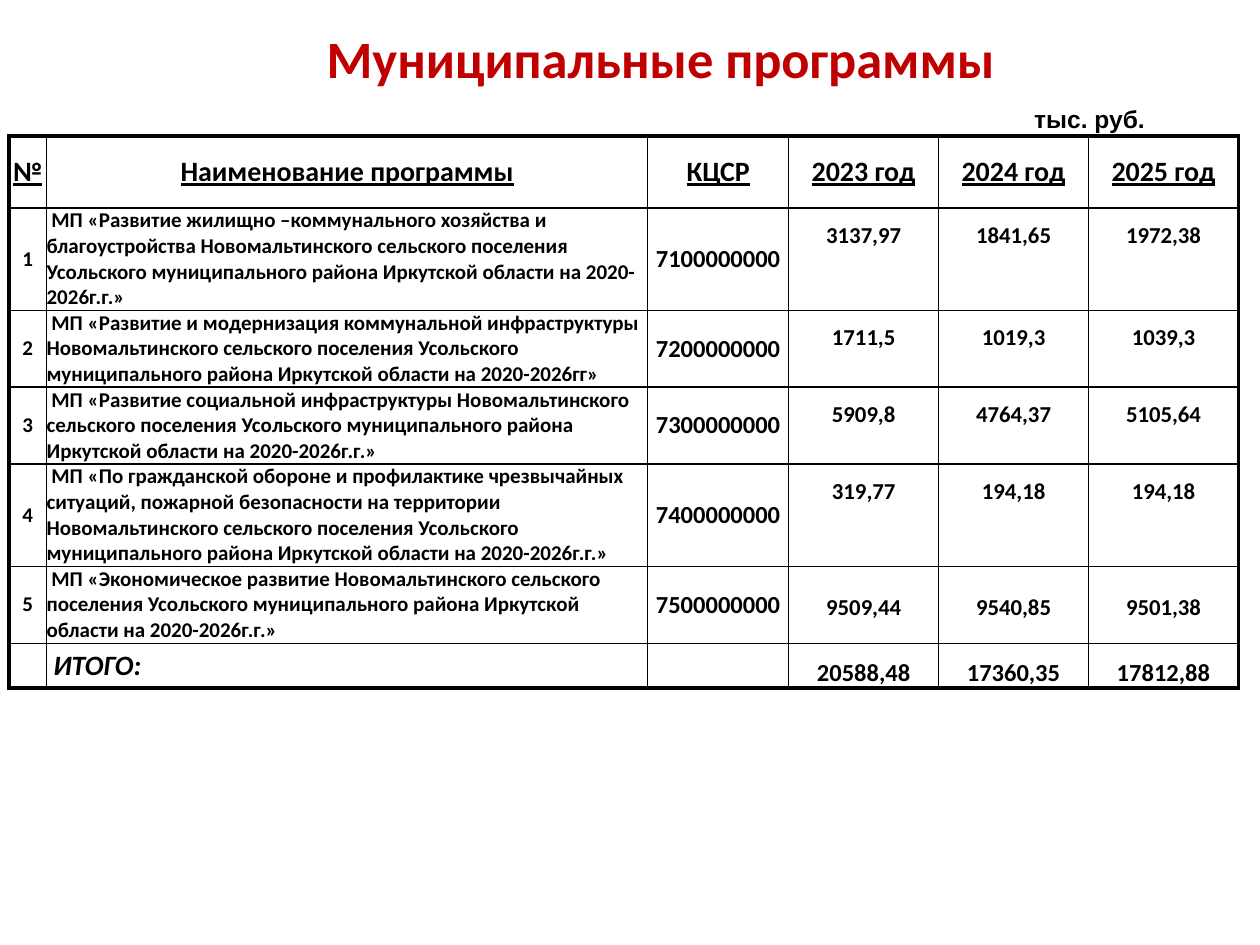
from lxml import etree
from pptx import Presentation
from pptx.dml.color import RGBColor
from pptx.enum.text import MSO_ANCHOR, MSO_AUTO_SIZE, PP_ALIGN
from pptx.oxml.ns import qn
from pptx.util import Inches, Pt

LEFT, CENTER = PP_ALIGN.LEFT, PP_ALIGN.CENTER
TOP, MIDDLE = MSO_ANCHOR.TOP, MSO_ANCHOR.MIDDLE
NO_FIT, GROW = MSO_AUTO_SIZE.NONE, MSO_AUTO_SIZE.SHAPE_TO_FIT_TEXT
TITLE_ONLY = 5

COLUMN_WIDTHS = [0.3, 4.77, 1.12, 1.19, 1.19, 1.19]
ROW_HEIGHTS = [0.57, 0.8, 0.6, 0.6, 0.8, 0.6, 0.35]
HEADINGS = ["№", "Наименование программы", "КЦСР", "2023 год", "2024 год", "2025 год"]
PROGRAMS = [
    (" МП «Развитие жилищно –коммунального хозяйства и благоустройства "
     "Новомальтинского сельского поселения Усольского муниципального района "
     "Иркутской области на 2020-2026г.г.»",
     "7100000000", ["3137,97", "1841,65", "1972,38"], 1.5),
    (" МП «Развитие и модернизация коммунальной инфраструктуры "
     "Новомальтинского сельского поселения Усольского муниципального района "
     "Иркутской области на 2020-2026гг»",
     "7200000000", ["1711,5", "1019,3", "1039,3"], 1.5),
    (" МП «Развитие социальной инфраструктуры "
     "Новомальтинского сельского поселения Усольского муниципального района "
     "Иркутской области на 2020-2026г.г.»",
     "7300000000", ["5909,8", "4764,37", "5105,64"], 1.5),
    (" МП «По гражданской обороне и профилактике чрезвычайных ситуаций, "
     "пожарной безопасности на территории "
     "Новомальтинского сельского поселения Усольского муниципального района "
     "Иркутской области на 2020-2026г.г.»",
     "7400000000", ["319,77", "194,18", "194,18"], 1.5),
    (" МП «Экономическое развитие "
     "Новомальтинского сельского поселения Усольского муниципального района "
     "Иркутской области на 2020-2026г.г.»",
     "7500000000", ["9509,44", "9540,85", "9501,38"], 2.0),
]
TOTALS = ["20588,48", "17360,35", "17812,88"]


def color(value):
    return RGBColor.from_string(value)


class Page:
    ink, accent = "000000", "C00000"
    font, label_font = "Calibri", "Arial"
    thin, thick = 1, 2.25

    def __init__(self, deck):
        self.deck = deck
        self.slide = deck.slides.add_slide(deck.slide_layouts[TITLE_ONLY])

    def area(self, left, top, width, height):
        across, down = self.deck.slide_width, self.deck.slide_height
        return (round(left * across), round(top * down),
                round(width * across), round(height * down))

    def add_span(self, para, text, size, font=None, ink=None, underline=False, italic=False):
        span = para.add_run()
        span.text = text
        span.font.name = font or self.font
        span.font.size = Pt(size)
        span.font.bold = True
        span.font.underline = underline
        span.font.italic = italic
        span.font.color.rgb = color(ink or self.ink)

    def title(self, text, *shares):
        box = self.slide.shapes.title
        box.left, box.top, box.width, box.height = self.area(*shares)
        frame = box.text_frame
        frame.auto_size = NO_FIT
        frame.vertical_anchor = MIDDLE
        para = frame.paragraphs[0]
        para.alignment = CENTER
        self.add_span(para, text, 30, ink=self.accent)

    def label(self, text, *shares):
        frame = self.slide.shapes.add_textbox(*self.area(*shares)).text_frame
        frame.word_wrap = False
        frame.auto_size = GROW
        self.add_span(frame.paragraphs[0], text, 14, self.label_font)

    def table(self, widths, heights, *shares):
        holder = self.slide.shapes.add_table(len(heights), len(widths), *self.area(*shares))
        table = holder.table
        table.first_row = table.horz_banding = False
        for column, width in zip(table.columns, widths):
            column.width = Inches(width)
        for row, height in zip(table.rows, heights):
            row.height = Inches(height)
        last_row, last_column = len(heights) - 1, len(widths) - 1
        for r in range(len(heights)):
            for c in range(len(widths)):
                cell = table.cell(r, c)
                cell.fill.background()
                cell.margin_left = cell.margin_right = 0
                cell.margin_top = cell.margin_bottom = 0
                outer = [c == 0, c == last_column, r == 0, r == last_row]
                self.borders(cell, outer)
        return table

    def borders(self, cell, outer):
        properties = cell._tc.get_or_add_tcPr()
        for place, (side, edge) in enumerate(zip("LRTB", outer)):
            width = Pt(self.thick if edge else self.thin)
            line = etree.Element(qn(f"a:ln{side}"), w=str(width))
            fill = etree.SubElement(line, qn("a:solidFill"))
            etree.SubElement(fill, qn("a:srgbClr"), val=self.ink)
            properties.insert(place, line)

    def cell(self, cell, text, size, align=CENTER, anchor=MIDDLE, spacing=None,
             margin=0, **style):
        cell.vertical_anchor = anchor
        cell.margin_left = cell.margin_right = Inches(margin)
        para = cell.text_frame.paragraphs[0]
        para.alignment = align
        if spacing:
            para.line_spacing = spacing
        self.add_span(para, text, size, **style)
        return para


def main():
    deck = Presentation()
    deck.slide_width, deck.slide_height = Inches(10), Inches(7.5)
    page = Page(deck)

    table = page.table(COLUMN_WIDTHS, ROW_HEIGHTS, 0.007, 0.144, 0.976, 0.576)
    for column, heading in enumerate(HEADINGS):
        page.cell(table.cell(0, column), heading, 16, underline=True)
    for row, (name, code, amounts, spacing) in enumerate(PROGRAMS, 1):
        page.cell(table.cell(row, 0), str(row), 12)
        page.cell(table.cell(row, 1), name, 12, LEFT)
        page.cell(table.cell(row, 2), code, 14)
        for column, amount in enumerate(amounts, 3):
            page.cell(table.cell(row, column), amount, 13, anchor=TOP,
                      spacing=spacing, margin=0.07)

    total_row = len(ROW_HEIGHTS) - 1
    total = page.cell(table.cell(total_row, 1), " ", 14, LEFT,
                      font=page.label_font, italic=True)
    page.add_span(total, "ИТОГО:", 16, italic=True)
    for column, amount in enumerate(TOTALS, 3):
        page.cell(table.cell(total_row, column), amount, 14, spacing=1.5, margin=0.07)

    page.label("тыс. руб.", 0.811, 0.104, 0.108, 0.045)
    page.title("Муниципальные программы", 0.087, 0.02, 0.875, 0.081)
    deck.save("out.pptx")


if __name__ == "__main__":
    main()
